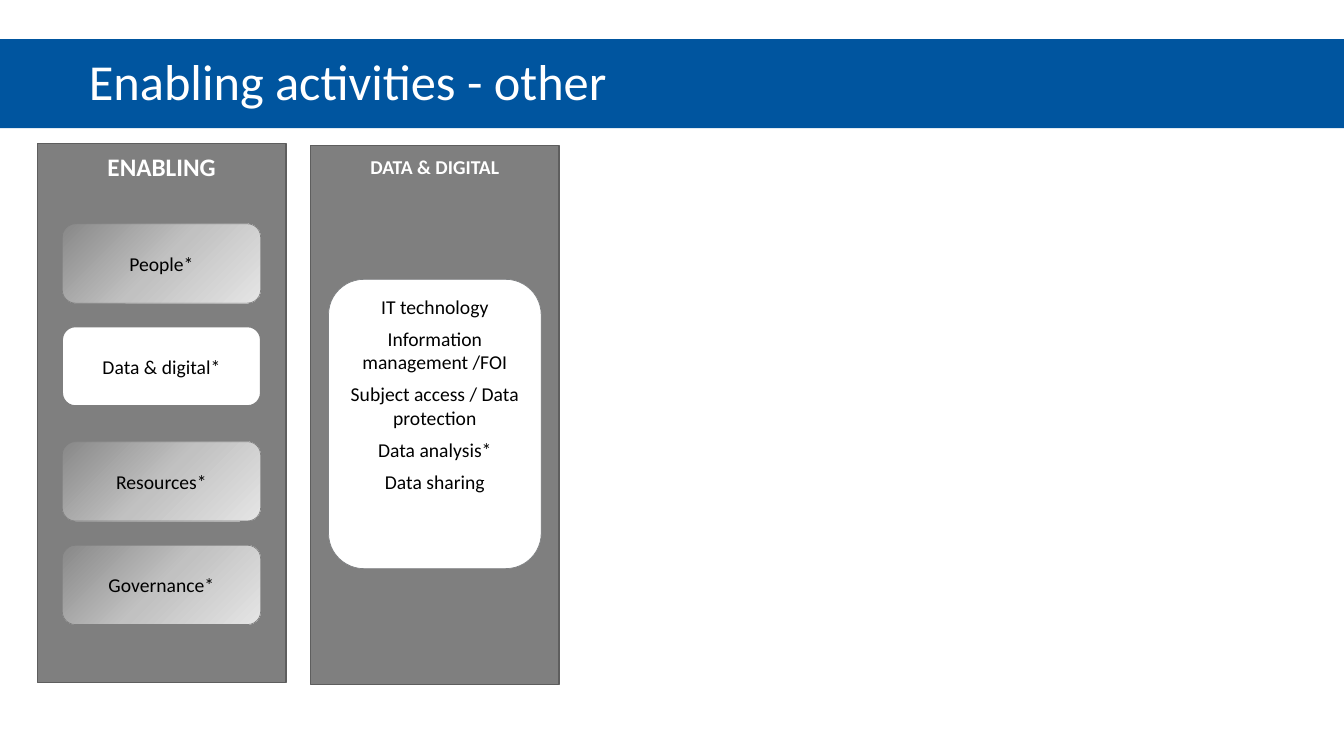
from copy import deepcopy

from pptx import Presentation
from pptx.dml.color import RGBColor
from pptx.enum.shapes import MSO_SHAPE as Kind
from pptx.enum.text import MSO_ANCHOR as Anchor, MSO_AUTO_SIZE as Auto, PP_ALIGN as Align
from pptx.util import Cm, Pt

BLUE = RGBColor(0x00, 0x55, 0x9F)
GREY = RGBColor(0x7F, 0x7F, 0x7F)
EDGE = RGBColor(0x5E, 0x5E, 0x5E)
RIM = RGBColor(0x80, 0x82, 0x84)
WHITE = RGBColor(0xFF, 0xFF, 0xFF)
BLACK = RGBColor(0x00, 0x00, 0x00)
SHADES = [RGBColor(0x88, 0x88, 0x88), RGBColor(0xC1, 0xC1, 0xC1), RGBColor(0xE5, 0xE5, 0xE5)]


class Sheet:
    font = "Calibri"

    def __init__(self, slide):
        self.slide = slide
        self.home = slide.shapes

    def group(self):
        """Put the next elements in a new group."""
        self.home = self.slide.shapes.add_group_shape().shapes

    def free(self):
        """Put the next elements straight on the slide."""
        self.home = self.slide.shapes

    def box(self, area, fill, line=None, width=1, kind=Kind.RECTANGLE):
        shape = self.home.add_shape(kind, *map(Cm, area))
        shape.shadow.inherit = False
        if isinstance(fill, list):
            self.blend(shape, fill)
        else:
            shape.fill.solid()
            shape.fill.fore_color.rgb = fill
        if line is None:
            shape.line.fill.background()
        else:
            shape.line.color.rgb = line
            shape.line.width = Pt(width)
        return shape

    def blend(self, shape, shades):
        shape.fill.gradient()
        shape.fill.gradient_angle = 315
        first = shape._element.spPr.xpath("./a:gradFill/a:gsLst/a:gs")[0]
        first.addnext(deepcopy(first))
        for i, (stop, shade) in enumerate(zip(shape.fill.gradient_stops, shades)):
            stop.position = i / (len(shades) - 1)
            stop.color.rgb = shade

    def text(self, shape, lines, size, color, bold=False, align=Align.CENTER,
             anchor=Anchor.MIDDLE, after=0):
        frame = shape.text_frame
        frame.word_wrap = True
        frame.vertical_anchor = anchor
        for i, line in enumerate(lines):
            para = frame.add_paragraph() if i else frame.paragraphs[0]
            para.alignment = align
            para.space_after = Pt(after)
            run = para.add_run()
            run.text = line
            run.font.name = self.font
            run.font.size = Pt(size)
            run.font.bold = bold
            run.font.color.rgb = color
        return frame

    def label(self, area, words, size, color):
        shape = self.home.add_textbox(*map(Cm, area))
        frame = self.text(shape, [words], size, color, True, Align.LEFT, Anchor.TOP)
        frame.word_wrap = False
        frame.auto_size = Auto.SHAPE_TO_FIT_TEXT


def main():
    deck = Presentation()
    deck.slide_width, deck.slide_height = Cm(33.87), Cm(19.05)
    sheet = Sheet(deck.slides.add_slide(deck.slide_layouts[6]))

    # Title band
    band = sheet.box((0, 0.99, 33.87, 2.24), BLUE)
    frame = sheet.text(band, ["Enabling activities - other"], 36, WHITE, align=Align.LEFT)
    frame.margin_left = Cm(2.24)
    frame.paragraphs[0].line_spacing = 0.9

    # Data and digital panel
    sheet.group()
    sheet.box((7.82, 3.66, 6.27, 13.59), GREY, EDGE)
    head = sheet.box((8.28, 3.68, 5.36, 1.02), GREY)
    sheet.text(head, ["DATA & DIGITAL"], 14, WHITE, bold=True)

    # List of data topics
    sheet.free()
    card = sheet.box((8.28, 7.04, 5.36, 7.29), WHITE, RIM, 0.5, Kind.ROUNDED_RECTANGLE)
    topics = ["IT technology", "Information management /FOI",
              "Subject access / Data protection", "Data analysis*", "Data sharing"]
    sheet.text(card, topics, 14, BLACK, anchor=Anchor.TOP, after=6)

    # Enabling panel with its four areas
    sheet.group()
    sheet.box((0.94, 3.61, 6.27, 13.59), GREY, EDGE)
    sheet.label((2.46, 3.68, 3.28, 1.02), "ENABLING", 18, WHITE)
    for top, name, fill, width in [
        (5.64, "People*", SHADES, 0.5),
        (8.23, "Data & digital*", WHITE, 1),
        (11.13, "Resources*", SHADES, 0.5),
        (13.74, "Governance*", SHADES, 0.5),
    ]:
        tile = sheet.box((1.57, top, 5, 2), fill, GREY, width, Kind.ROUNDED_RECTANGLE)
        sheet.text(tile, [name], 14, BLACK)

    deck.save("out.pptx")


if __name__ == "__main__":
    main()
